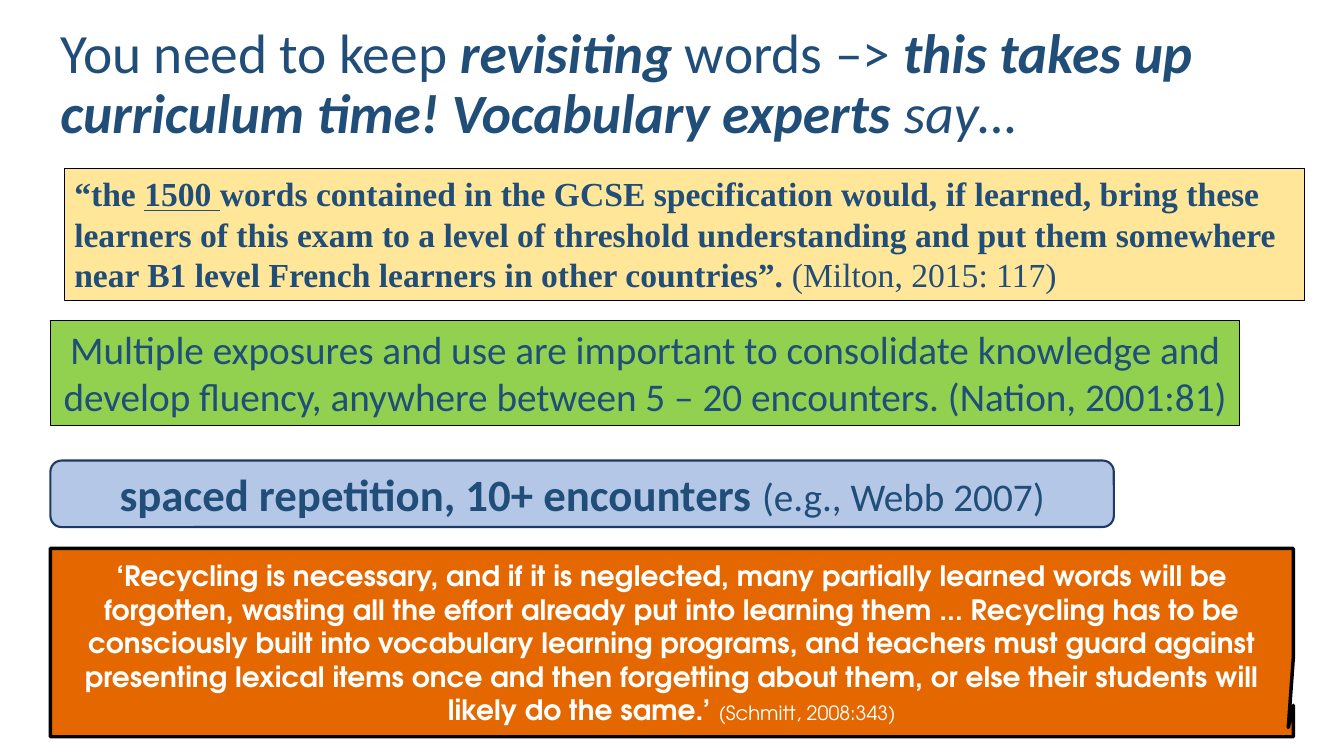
from pptx import Presentation
from pptx.dml.color import RGBColor
from pptx.enum import shapes, text
from pptx.util import Pt

NAVY = RGBColor(0x20, 0x4E, 0x79)
WHITE = RGBColor(0xFF, 0xFF, 0xFF)
BLACK = RGBColor(0, 0, 0)
ORANGE = RGBColor(0xE5, 0x67, 0x00)
PALE_BLUE = RGBColor(0xB4, 0xC7, 0xE7)
DARK_BLUE = RGBColor(0x20, 0x38, 0x64)
GREEN = RGBColor(0x92, 0xD0, 0x50)
YELLOW = RGBColor(0xFF, 0xE6, 0x99)

MSO = shapes.MSO_SHAPE
LEFT, CENTER = text.PP_ALIGN.LEFT, text.PP_ALIGN.CENTER
TOP, MIDDLE = text.MSO_ANCHOR.TOP, text.MSO_ANCHOR.MIDDLE


def write(sp, font, color, align, anchor, runs):
    tf = sp.text_frame
    tf.word_wrap = True
    tf.vertical_anchor = anchor
    p = tf.paragraphs[0]
    p.alignment = align
    for words, size, style in runs:
        r = p.add_run()
        r.text = words
        r.font.name = font
        r.font.size = Pt(size)
        r.font.color.rgb = color
        r.font.bold = "b" in style
        r.font.italic = "i" in style
        r.font.underline = "u" in style


prs = Presentation()
prs.slide_width, prs.slide_height = Pt(960), Pt(540)
s = prs.slides.add_slide(prs.slide_layouts[6])

title = s.shapes.add_textbox(Pt(36), Pt(13.7), Pt(869.8), Pt(94.3))
write(title, "Calibri", NAVY, LEFT, MIDDLE, [
    ("You need to keep ", 39.6, ""),
    ("revisiting", 39.6, "bi"),
    (" words –> ", 39.6, ""),
    ("this takes up curriculum time! Vocabulary experts ", 39.6, "bi"),
    ("say…", 39.6, "i"),
])
title.text_frame.paragraphs[0].line_spacing = 0.9

quotes = [
    (MSO.RECTANGULAR_CALLOUT, (36, 391.7, 887.8, 134.6), ORANGE, BLACK, 2.5,
     "TeX Gyre Adventor", WHITE, CENTER, MIDDLE, [
         ("‘Recycling is necessary, and if it is neglected, many partially learned words "
          "will be forgotten, wasting all the effort already put into learning them ... "
          "Recycling has to be consciously built into vocabulary learning programs, and "
          "teachers must guard against presenting lexical items once and then forgetting "
          "about them, or else their students will likely do the same.’ ", 20, "b"),
         ("(Schmitt, 2008:343)", 14, "")]),
    (MSO.ROUNDED_RECTANGLE, (36, 329, 759.6, 47.5), PALE_BLUE, DARK_BLUE, 1.5,
     "Calibri", NAVY, CENTER, MIDDLE, [
         ("spaced repetition, 10+ encounters ", 32, "b"),
         ("(e.g., Webb 2007)", 28, "")]),
    (MSO.RECTANGLE, (36, 229, 849.6, 75), GREEN, BLACK, 0.75,
     "Calibri", NAVY, CENTER, TOP, [
         ("Multiple exposures and use are important to consolidate knowledge and develop "
          "fluency, anywhere between 5 – 20 encounters. (Nation, 2001:81)", 28, "")]),
    (MSO.RECTANGLE, (46, 120.2, 885.6, 94.5), YELLOW, BLACK, 0.75,
     "Times New Roman", NAVY, LEFT, TOP, [
         ("“the ", 24, "b"),
         ("1500 ", 24, "bu"),
         ("words contained in the GCSE specification would, if learned, bring these "
          "learners of this exam to a level of threshold understanding and put them "
          "somewhere near B1 level French learners in other countries”. ", 24, "b"),
         ("(Milton, 2015: 117)", 24, "")]),
]
for kind, box, fill, line, width, font, color, align, anchor, runs in quotes:
    sp = s.shapes.add_shape(kind, *map(Pt, box))
    sp.shadow.inherit = False
    sp.fill.solid()
    sp.fill.fore_color.rgb = fill
    sp.line.color.rgb = line
    sp.line.width = Pt(width)
    write(sp, font, color, align, anchor, runs)
    if kind == MSO.RECTANGULAR_CALLOUT:
        sp.adjustments[0], sp.adjustments[1] = 0.496, 0.451
    elif kind == MSO.ROUNDED_RECTANGLE:
        sp.text_frame.margin_left = sp.text_frame.margin_right = 0
    else:
        sp.text_frame.auto_size = text.MSO_AUTO_SIZE.SHAPE_TO_FIT_TEXT

prs.save("out.pptx")
